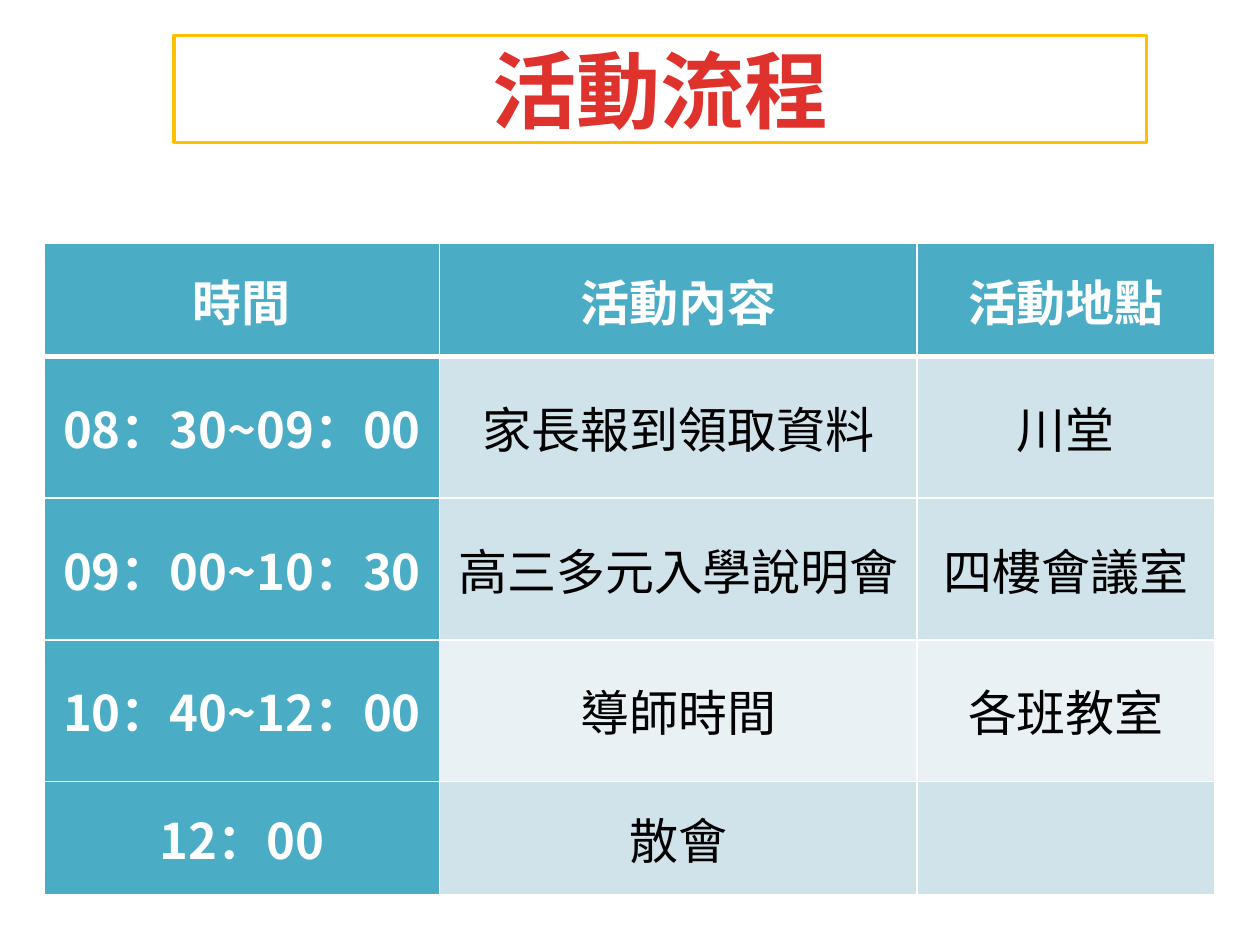
from lxml import etree
from pptx import Presentation
from pptx.dml.color import RGBColor
from pptx.enum import lang, text
from pptx.oxml import ns
from pptx.util import Inches, Pt

WHITE = RGBColor(0xFF, 0xFF, 0xFF)
BLACK = RGBColor(0, 0, 0)
RED = RGBColor(0xDF, 0x32, 0x2D)
GOLD = RGBColor(0xFF, 0xC0, 0x00)
TEAL = RGBColor(0x4B, 0xAC, 0xC6)
PALE_BLUE = RGBColor(0xD0, 0xE3, 0xEA)
PALE_GREY = RGBColor(0xE9, 0xF1, 0xF5)

CJK_FONT = "Noto Sans CJK SC"
COLUMN_WIDTHS = (3.14, 3.79, 2.36)
ROW_HEIGHT = 0.9
SCHEDULE = (
    ("時間", "活動內容", "活動地點"),
    ("08：30~09：00", "家長報到領取資料", "川堂"),
    ("09：00~10：30", "高三多元入學說明會", "四樓會議室"),
    ("10：40~12：00", "導師時間", "各班教室"),
    ("12：00", "散會", ""),
)
ROW_FILLS = (TEAL, PALE_BLUE, PALE_BLUE, PALE_GREY, PALE_BLUE)


def add_element(parent, tag, **attributes):
    return etree.SubElement(parent, ns.qn(tag), attributes)


def style_paragraph(para, size, color, bold, latin):
    para.alignment = text.PP_ALIGN.CENTER
    for span in para.runs:
        font = span.font
        font.size = Pt(size)
        font.bold = bold
        font.color.rgb = color
        font.name = latin
        font.language_id = lang.MSO_LANGUAGE_ID.TRADITIONAL_CHINESE
        add_element(span._r.get_or_add_rPr(), "a:ea", typeface=CJK_FONT)


def round_outline(box, adjustment):
    properties = box._element.spPr
    geometry = etree.Element(ns.qn("a:prstGeom"), prst="roundRect")
    guides = add_element(geometry, "a:avLst")
    add_element(guides, "a:gd", name="adj", fmla=f"val {adjustment}")
    properties.find(ns.qn("a:xfrm")).addnext(geometry)


def format_title(box, wording):
    box.left, box.top = Inches(1.38), Inches(0.28)
    box.width, box.height = Inches(7.72), Inches(0.85)
    round_outline(box, 16667)
    box.fill.solid()
    box.fill.fore_color.rgb = WHITE
    color = box._element.spPr.find(".//" + ns.qn("a:srgbClr"))
    add_element(color, "a:alpha", val="42000")
    box.line.color.rgb = GOLD
    box.line.width = Pt(2)
    frame = box.text_frame
    frame.text = wording
    frame.auto_size = text.MSO_AUTO_SIZE.NONE
    frame.vertical_anchor = text.MSO_ANCHOR.MIDDLE
    style_paragraph(frame.paragraphs[0], 48, RED, True, "Lato")


def set_borders(cell, widths):
    properties = cell._tc.get_or_add_tcPr()
    for side, width in zip("LRTB", widths):
        line = add_element(properties, f"a:ln{side}", w=str(Pt(width)))
        fill = add_element(line, "a:solidFill")
        add_element(fill, "a:srgbClr", val=str(WHITE))


def format_cell(cell, wording, row, column):
    heading = row == 0 or column == 0
    cell.text = wording
    cell.vertical_anchor = text.MSO_ANCHOR.MIDDLE
    cell.margin_left = cell.margin_right = Inches(0.07)
    cell.margin_top = cell.margin_bottom = 0
    set_borders(cell, (1, 1, 3 if row == 1 else 1, 3 if row == 0 else 1))
    cell.fill.solid()
    cell.fill.fore_color.rgb = TEAL if heading else ROW_FILLS[row]
    color = WHITE if heading else BLACK
    style_paragraph(cell.text_frame.paragraphs[0], 28, color, heading, CJK_FONT)


def add_schedule(page):
    frame = page.shapes.add_table(
        len(SCHEDULE), len(COLUMN_WIDTHS), Inches(0.35), Inches(1.93),
        Inches(sum(COLUMN_WIDTHS)), Inches(ROW_HEIGHT * len(SCHEDULE)))
    table = frame.table
    for column, width in zip(table.columns, COLUMN_WIDTHS):
        column.width = Inches(width)
    for row, entries in enumerate(SCHEDULE):
        table.rows[row].height = Inches(ROW_HEIGHT)
        for column, wording in enumerate(entries):
            format_cell(table.cell(row, column), wording, row, column)


def main():
    deck = Presentation()
    deck.slide_width, deck.slide_height = Inches(10), Inches(7.5)
    page = deck.slides.add_slide(deck.slide_layouts[5])
    format_title(page.shapes.title, "活動流程")
    add_schedule(page)
    deck.save("out.pptx")


if __name__ == "__main__":
    main()
